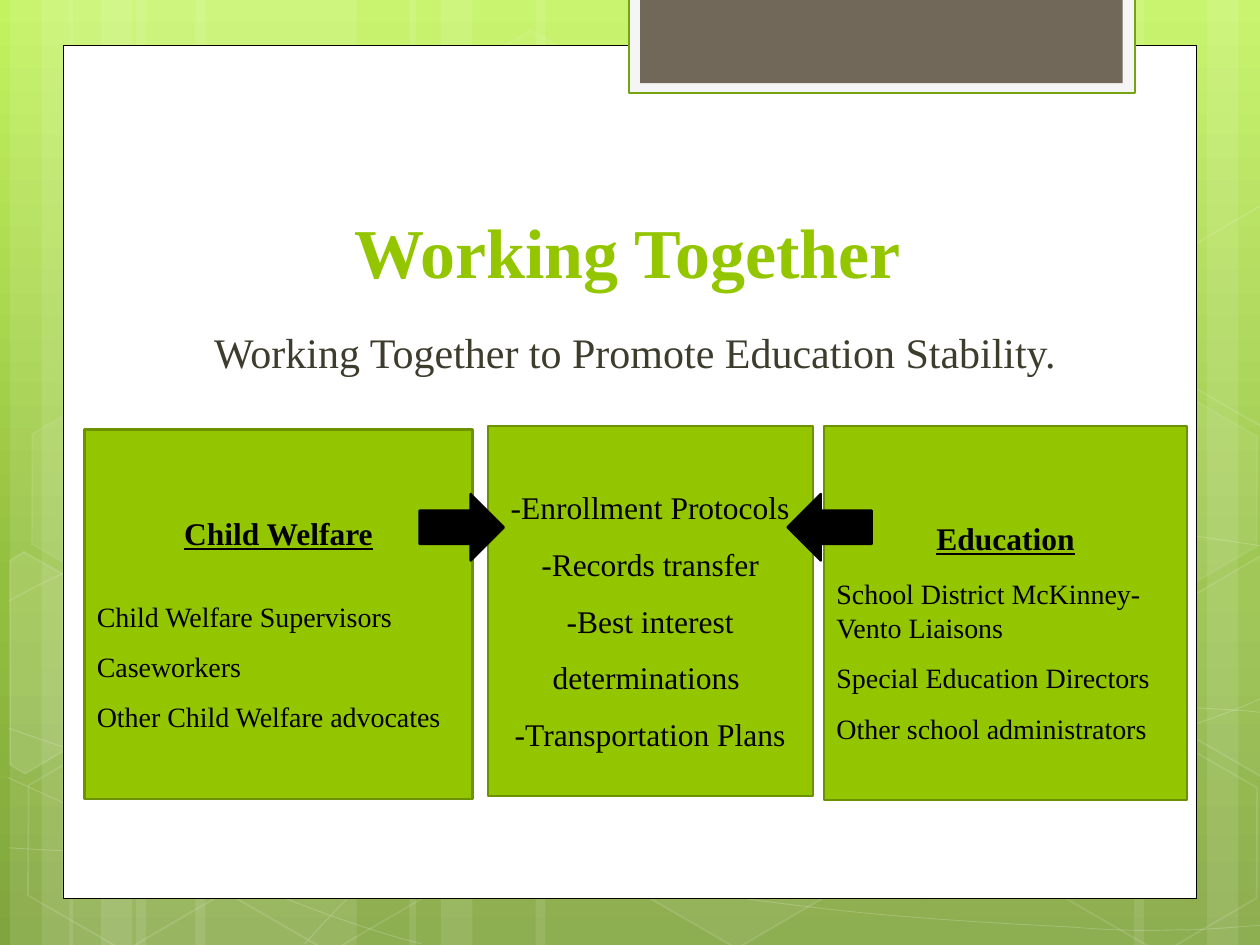
from copy import deepcopy

from lxml import etree
from pptx import Presentation
from pptx import util as u
from pptx.dml.color import RGBColor
from pptx.enum import shapes, text
from pptx.oxml.ns import qn

EMU_PER_PX = 9144  # 100 px to the inch
FONT = "Times New Roman"
COLORS = {
    "sky": "C3F35F", "leaf": "93BF3F", "moss": "81A53E",
    "white": "FFFFFF", "black": "000000", "frame": "F5F5F5",
    "frame_line": "74A510", "tab": "71685A", "lime": "94C600",
    "lime_line": "6D9200", "body": "3E3D2D",
}
SHAPE = shapes.MSO_SHAPE
CENTER = text.PP_ALIGN.CENTER
LEFT = text.PP_ALIGN.LEFT

STRIPES = [(108, 175), (8, 50), (33, 83), (155, 175), (55, 50), (80, 83),
           (733, 175), (958, 50), (900, 83), (425, 308), (325, 50), (350, 83)]
# Each curve is a start point followed by cubic Bezier triples.
CURVES = [
    [(7, 673), (61, 676), (115, 679), (190, 678), (265, 677), (358, 675), (458, 665),
     (558, 655), (700, 636), (792, 617), (883, 598), (977, 568), (1007, 551)],
    [(7, 477), (36, 461), (65, 446), (121, 431), (178, 416), (259, 394), (347, 387),
     (436, 380), (544, 379), (654, 387), (764, 395), (947, 426), (1007, 434)],
    [(6, 617), (127, 672), (247, 727), (334, 749)],
    [(7, 578), (38, 589), (70, 600), (128, 616), (186, 631), (273, 656), (357, 673),
     (440, 690), (545, 708), (628, 718), (711, 729), (800, 733), (853, 736),
     (905, 740), (919, 738), (945, 738), (971, 737), (989, 735), (1007, 734)],
    [(242, 749), (260, 729), (278, 709), (302, 691), (326, 673), (360, 653), (388, 639),
     (416, 625), (433, 619), (470, 609), (506, 599), (573, 585), (608, 578),
     (644, 571), (649, 571), (680, 569), (711, 566), (760, 563), (794, 562),
     (829, 561), (886, 562), (886, 562), (908, 562), (931, 562), (953, 562),
     (971, 563), (988, 564), (997, 565), (1006, 566), (1003, 565), (1006, 566)],
]
# left, top, fill opacity, line opacity
HEXAGONS = [(334, 36, 4, 8), (497, 589, 6, 12), (11, 591, 0, 12), (14, 312, 7, 8),
            (174, 592, 0, 12), (753, 453, 10, 12), (834, 593, 0, 12), (834, 314, 7, 8)]
CUT_HEXAGONS = [
    ([(8, 445), (19, 438), (96, 482), (95, 570), (20, 614), (8, 607)], 10),
    ([(926, 485), (1001, 441), (1009, 446), (1009, 613), (1002, 617), (926, 573)], 4),
    ([(926, 207), (1001, 163), (1010, 168), (1009, 335), (1002, 339), (926, 295)], 0),
]


def px(length):
    return u.Emu(length * EMU_PER_PX)


def rgb(name):
    return RGBColor.from_string(COLORS[name])


def add_opacity(shape, tag, percent):
    color = shape.element.spPr.find(tag).find(".//" + qn("a:srgbClr"))
    etree.SubElement(color, qn("a:alpha"), val=str(percent * 1000))


def style(shape, fill=None, line=None, width=1.25, fill_opacity=100, line_opacity=100):
    shape.shadow.inherit = False
    if fill:
        shape.fill.solid()
        shape.fill.fore_color.rgb = rgb(fill)
        if fill_opacity < 100:
            add_opacity(shape, qn("a:solidFill"), fill_opacity)
    else:
        shape.fill.background()
    if line:
        shape.line.color.rgb = rgb(line)
        shape.line.width = u.Pt(width)
        if line_opacity < 100:
            add_opacity(shape, qn("a:ln"), line_opacity)
    else:
        shape.line.fill.background()


def add_box(page, kind, box, **look):
    shape = page.shapes.add_shape(kind, *map(px, box))
    style(shape, **look)
    return shape


def add_outline(page, points, closed, **look):
    points = [(px(x), px(y)) for x, y in points]
    builder = page.shapes.build_freeform(*points[0], scale=1.0)
    builder.add_line_segments(points[1:], close=closed)
    shape = builder.convert_to_shape()
    style(shape, **look)
    return shape


def add_curve(page, curve, **look):
    """Draw lines between the anchors, then bend each one by its control points."""
    shape = add_outline(page, curve[::3], False, **look)
    lines = list(shape.element.iter(qn("a:lnTo")))
    for i, line in enumerate(lines):
        bend = etree.Element(qn("a:cubicBezTo"))
        for x, y in curve[3 * i + 1:3 * i + 4]:
            etree.SubElement(bend, qn("a:pt"), x=str(px(x) - shape.left),
                             y=str(px(y) - shape.top))
        line.getparent().replace(line, bend)


def set_background(page):
    fill = page.background.fill
    fill.gradient()
    fill.gradient_angle = 270
    stops = page.element.find(".//" + qn("a:gsLst"))
    stops.insert(1, deepcopy(stops[0]))
    for stop, place, name in zip(fill.gradient_stops, (0, 0.62, 1), ("sky", "leaf", "moss")):
        stop.position = place
        stop.color.rgb = rgb(name)


def add_backdrop(page, height):
    set_background(page)
    for left, width in STRIPES:
        add_box(page, SHAPE.RECTANGLE, (left, 0, width, height),
                fill="white", fill_opacity=10)
    for curve in CURVES:
        add_curve(page, curve, line="white", width=0.5, line_opacity=20)
    for left, top, inside, edge in HEXAGONS:
        hexagon = add_box(page, SHAPE.HEXAGON, (left, top, 175, 152),
                          fill="white" if inside else None, fill_opacity=inside,
                          line="white", width=1, line_opacity=edge)
        hexagon.adjustments[0] = 0.285
        hexagon.rotation = 30
    for points, inside in CUT_HEXAGONS:
        add_outline(page, points, True, fill="white" if inside else None,
                    fill_opacity=inside, line="white", width=1, line_opacity=12)


def add_panel(page, box):
    left, top, width, height = box
    add_box(page, SHAPE.RECTANGLE, box, fill="white", line="black", width=0.5)
    add_box(page, SHAPE.RECTANGLE, (left + 449, top - 38, 402, 76),
            fill="frame", line="frame_line")
    add_box(page, SHAPE.RECTANGLE, (left + 458, top - 38, 383, 68), fill="tab")


def write(para, words, size, color="black", align=CENTER, spacing=1.0, before=0, strong=False):
    para.text = words
    para.alignment = align
    para.line_spacing = spacing
    para.space_before = u.Pt(before)
    para.font.name = FONT
    para.font.size = u.Pt(size)
    para.font.color.rgb = rgb(color)
    para.font.bold = strong


def add_heading(page, box, words, size, color, anchor, **look):
    frame = page.shapes.add_textbox(*map(px, box)).text_frame
    frame.word_wrap = True
    frame.vertical_anchor = anchor
    write(frame.paragraphs[0], words, size, color, **look)
    return frame.paragraphs[0]


def add_card(page, box, lines, extra_top=0):
    """Each line is its words and the settings for write."""
    frame = add_box(page, SHAPE.RECTANGLE, box, fill="lime", line="lime_line").text_frame
    frame.word_wrap = True
    frame.vertical_anchor = text.MSO_ANCHOR.MIDDLE
    frame.margin_top = px(5 + extra_top)
    for i, (words, look) in enumerate(lines):
        para = frame.add_paragraph() if i else frame.paragraphs[0]
        write(para, words, **look)
        para.font.underline = look.get("strong", False)


def add_cards(page, box):
    left, top = box[:2]
    title = {"size": 18, "strong": True}
    item = {"size": 16, "align": LEFT, "spacing": 1.5}
    shared = {"size": 18, "spacing": 1.5}
    add_card(page, (left, top + 3, 308, 293), [
        ("Child Welfare", {**title, "spacing": 1.5}),
        ("Child Welfare Supervisors", {**item, "before": 17.5}),
        ("Caseworkers", item),
        ("Other Child Welfare advocates", item)])
    add_card(page, (left + 320, top, 258, 294), [
        (words, shared) for words in (
            "-Enrollment Protocols", "-Records transfer",
            "-Best interest determinations ", "-Transportation Plans")])
    add_card(page, (left + 587, top, 288, 297), [
        ("Education", title),
        ("School District McKinney-Vento Liaisons", {**item, "spacing": 1.0, "before": 11.5}),
        ("Special Education Directors", item),
        ("Other school administrators", item)], extra_top=30)
    for kind, offset in ((SHAPE.RIGHT_ARROW, 266), (SHAPE.LEFT_ARROW, 558)):
        add_box(page, kind, (left + offset, top + 54, 67, 53), fill="black", line="black")


def main():
    deck = Presentation()
    deck.slide_width, deck.slide_height = px(1000), px(750)
    page = deck.slides.add_slide(deck.slide_layouts[6])
    add_backdrop(page, 750)
    add_panel(page, (50, 36, 900, 677))
    add_heading(page, (114, 112, 768, 125), "Working Together", 40, "lime",
                text.MSO_ANCHOR.BOTTOM, strong=True)
    subtitle = add_heading(page, (84, 254, 833, 384),
                           "Working Together to Promote Education Stability.", 24, "body",
                           text.MSO_ANCHOR.TOP, before=4.8)
    subtitle._p.get_or_add_pPr().set("marL", str(px(7)))
    add_cards(page, (67, 338, 875, 297))
    deck.save("out.pptx")


if __name__ == "__main__":
    main()
